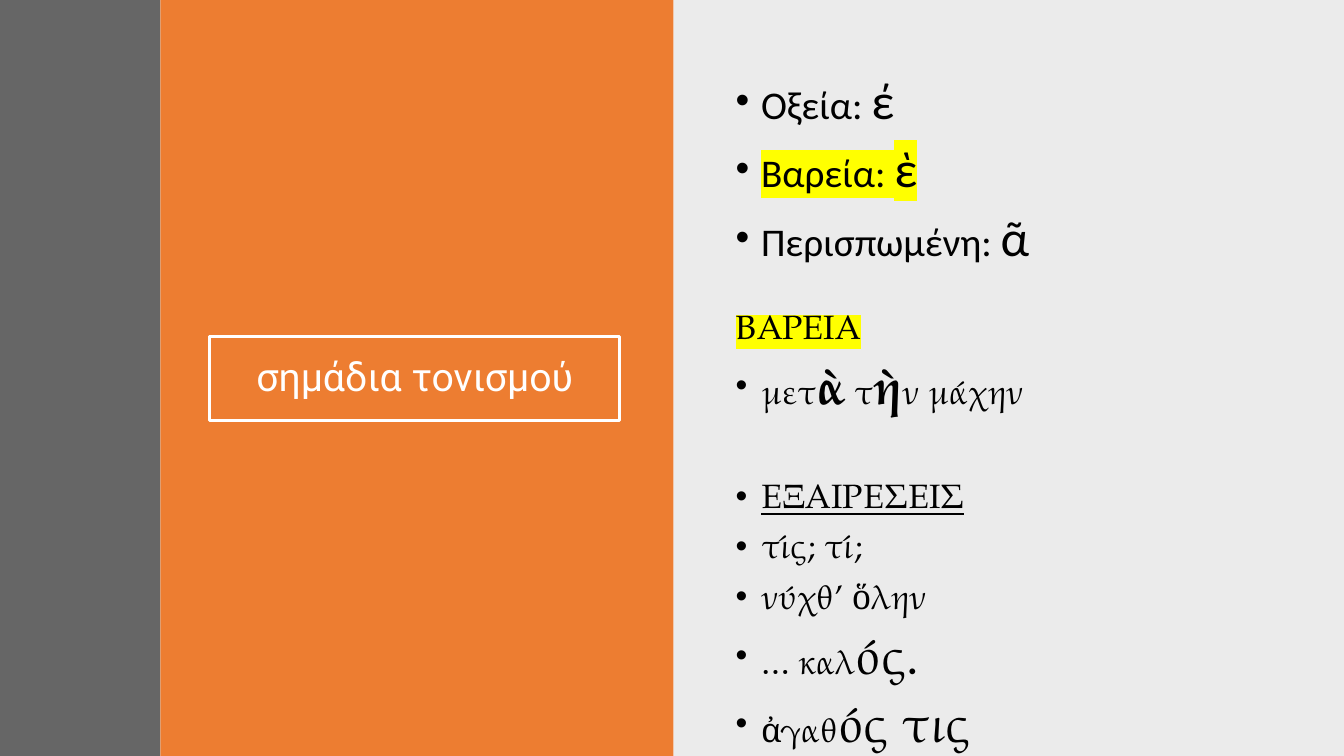
from lxml.etree import SubElement
from pptx import Presentation
from pptx.dml.color import RGBColor
from pptx.enum.shapes import MSO_SHAPE
from pptx.enum.text import MSO_ANCHOR, MSO_AUTO_SIZE, PP_ALIGN
from pptx.oxml import parse_xml
from pptx.oxml.ns import nsdecls, qn
from pptx.util import Cm, Pt

WHITE = RGBColor(0xFF, 0xFF, 0xFF)
BLACK = RGBColor(0x00, 0x00, 0x00)
ORANGE = RGBColor(0xED, 0x7D, 0x31)
CHARCOAL = RGBColor(0x40, 0x40, 0x40)
YELLOW = RGBColor(0xFF, 0xFF, 0x00)

WIDTH, HEIGHT = Cm(33.87), Cm(19.05)
STRIP_WIDTH = Cm(4.04)
TITLE_PANEL_WIDTH = Cm(12.93)
INDENT = Cm(0.64)
LARGE = {"size": 36}
LARGE_BOLD = {"size": 36, "bold": True}
MARKED = {"highlight": YELLOW}

# Each line: (bulleted, space before in points, runs of text and style)
ACCENT_MARKS = [
    (True, 10, [("Οξεία: ", {}), ("έ", LARGE)]),
    (True, 10, [("Βαρεία: ", MARKED), ("ὲ", LARGE | MARKED)]),
    (True, 10, [("Περισπωμένη: ", {}), ("ᾶ", LARGE)]),
]
GRAVE_RULES = [
    (False, 10, [("ΒΑΡΕΙΑ", MARKED)]),
    (True, 10, [("μετ", {}), ("ὰ", LARGE_BOLD), (" τ", {}),
                ("ὴ", LARGE_BOLD), ("ν μάχην", {})]),
    (True, 46, [("ΕΞΑΙΡΕΣΕΙΣ", {"underline": True})]),
    (True, 10, [("τίς; τί;", {})]),
    (True, 10, [("νύχθ’ ὅλην", {})]),
    (True, 10, [("… καλ", {}), ("ός.", LARGE)]),
    (True, 10, [("ἀγαθ", {}), ("ός τις", LARGE)]),
]


def add_panel(slide, left, width, color, opacity=100):
    """Add a full-height colour band; opacity is in percent."""
    panel = slide.shapes.add_shape(MSO_SHAPE.RECTANGLE, left, 0, width, HEIGHT)
    panel.shadow.inherit = False
    panel.line.fill.background()
    panel.fill.solid()
    panel.fill.fore_color.rgb = color
    if opacity < 100:
        srgb = panel.fill._xPr.find(qn("a:solidFill"))[0]
        SubElement(srgb, qn("a:alpha"), val=str(opacity * 1000))


def add_run(paragraph, text, font_name, size, color,
            bold=False, underline=False, highlight=None):
    run = paragraph.add_run()
    run.text = text
    font = run.font
    font.name, font.size = font_name, Pt(size)
    font.bold, font.underline = bold, underline
    font.color.rgb = color
    if highlight is not None:
        mark = parse_xml(f'<a:highlight {nsdecls("a")}>'
                         f'<a:srgbClr val="{highlight}"/></a:highlight>')
        run._r.rPr.find(qn("a:solidFill")).addnext(mark)


def add_bullet(paragraph):
    properties = paragraph._p.get_or_add_pPr()
    properties.set("marL", str(INDENT))
    properties.set("indent", str(-INDENT))
    SubElement(properties, qn("a:buFont"), typeface="Arial")
    SubElement(properties, qn("a:buChar"), char="•")


def add_lines(slide, left, top, width, height, lines, font_name, size):
    frame = slide.shapes.add_textbox(left, top, width, height).text_frame
    frame.word_wrap = True
    for index, (bulleted, space_before, runs) in enumerate(lines):
        paragraph = frame.add_paragraph() if index else frame.paragraphs[0]
        paragraph.line_spacing = 0.9
        paragraph.space_before = Pt(space_before)
        if bulleted:
            add_bullet(paragraph)
        for text, style in runs:
            add_run(paragraph, text, font_name, color=BLACK,
                    **({"size": size} | style))


def add_title_panel(slide, left, width):
    add_panel(slide, left, width, ORANGE)
    title = slide.shapes.title
    slide.shapes._spTree.append(title._element)  # bring in front of the panel
    title.left, title.top = left + Cm(1.24), Cm(8.48)
    title.width, title.height = Cm(10.34), Cm(2.11)
    title.line.color.rgb = WHITE
    title.line.width = Pt(2)
    frame = title.text_frame
    frame.word_wrap = True
    frame.auto_size = MSO_AUTO_SIZE.NONE
    frame.vertical_anchor = MSO_ANCHOR.MIDDLE
    heading = frame.paragraphs[0]
    heading.alignment = PP_ALIGN.CENTER
    heading.line_spacing = 0.9
    add_run(heading, "σημάδια τονισμού", "Roboto", 28, WHITE)


def add_accent_panel(slide, left, width):
    add_panel(slide, left, width, BLACK, opacity=8)
    text_left, text_width = left + Cm(1.32), Cm(14.05)
    add_lines(slide, text_left, Cm(1.78), text_width, Cm(7.09),
              ACCENT_MARKS, "Calibri", 28)
    add_lines(slide, text_left, Cm(7.7), text_width, Cm(11.35),
              GRAVE_RULES, "TeX Gyre Pagella", 24)


def main():
    presentation = Presentation()
    presentation.slide_width, presentation.slide_height = WIDTH, HEIGHT
    slide = presentation.slides.add_slide(presentation.slide_layouts[5])
    accents_left = STRIP_WIDTH + TITLE_PANEL_WIDTH
    add_accent_panel(slide, accents_left, WIDTH - accents_left)
    add_title_panel(slide, STRIP_WIDTH, TITLE_PANEL_WIDTH)
    add_panel(slide, 0, STRIP_WIDTH, CHARCOAL, opacity=80)
    presentation.save("out.pptx")


if __name__ == "__main__":
    main()
